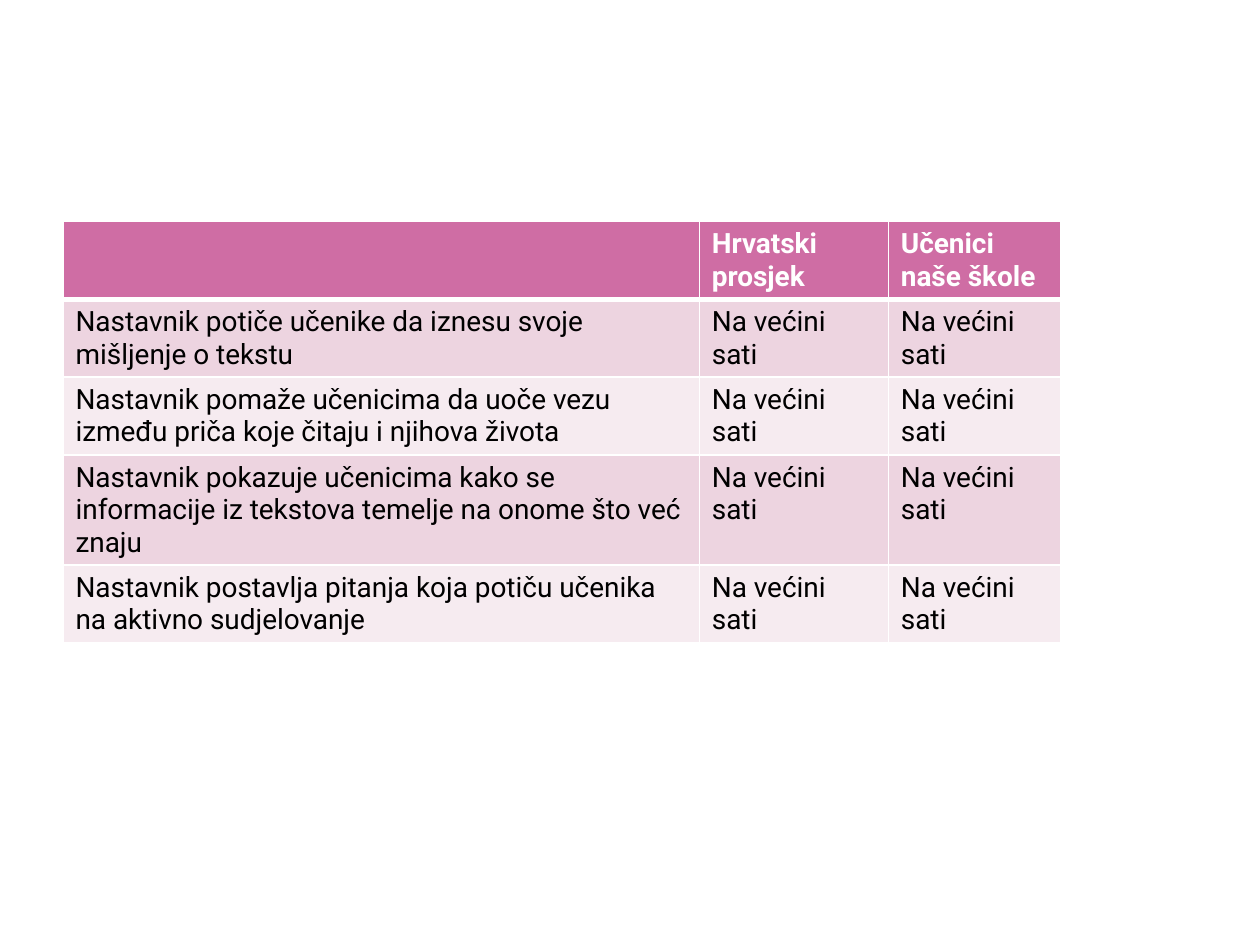
from dataclasses import dataclass

import pptx
import pptx.dml.color
import pptx.oxml.ns
import pptx.util
from lxml import etree


@dataclass(frozen=True)
class Theme:
    font: str = "Roboto"
    size: float = 16
    header: str = "CF6DA4"
    bands: tuple[str, str] = ("EDD4E0", "F6EBF0")
    light: str = "FFFFFF"
    dark: str = "000000"
    rule: float = 1
    header_rule: float = 3


@dataclass(frozen=True)
class Row:
    practice: str
    croatian_average: str
    our_school: str

    def texts(self) -> tuple[str, str, str]:
        return self.practice, self.croatian_average, self.our_school


THEME = Theme()
SLIDE_WIDTH, SLIDE_HEIGHT = 10, 7.5
TABLE_LEFT, TABLE_TOP = 0.05 * SLIDE_WIDTH, 1.76
COLUMN_WIDTHS = (5.05, 1.5, 1.37)
ROW_HEIGHT = 0.41
FREQUENCY = "Na većini sati"
PRACTICES = (
    "Nastavnik potiče učenike da iznesu svoje mišljenje o tekstu",
    "Nastavnik pomaže učenicima da uoče vezu između priča koje čitaju i njihova života",
    "Nastavnik pokazuje učenicima kako se informacije iz tekstova temelje na onome što već znaju",
    "Nastavnik postavlja pitanja koja potiču učenika na aktivno sudjelovanje",
)
ROWS = [Row("", "Hrvatski prosjek", "Učenici naše škole")] + [
    Row(practice, FREQUENCY, FREQUENCY) for practice in PRACTICES
]


def add_borders(cell, top: float, bottom: float) -> None:
    qn = pptx.oxml.ns.qn
    properties = cell._tc.get_or_add_tcPr()
    widths = {"lnL": THEME.rule, "lnR": THEME.rule, "lnT": top, "lnB": bottom}
    for side, width in widths.items():
        line = etree.SubElement(properties, qn(f"a:{side}"), w=str(pptx.util.Pt(width)))
        fill = etree.SubElement(line, qn("a:solidFill"))
        etree.SubElement(fill, qn("a:srgbClr"), val=THEME.light)


def fill_cell(cell, text: str, row_index: int) -> None:
    is_header = row_index == 0
    add_borders(
        cell,
        top=THEME.header_rule if row_index == 1 else THEME.rule,
        bottom=THEME.header_rule if is_header else THEME.rule,
    )
    color = THEME.header if is_header else THEME.bands[(row_index - 1) % 2]
    cell.fill.solid()
    cell.fill.fore_color.rgb = pptx.dml.color.RGBColor.from_string(color)
    if not text:
        return
    span = cell.text_frame.paragraphs[0].add_run()
    span.text = text
    span.font.name = THEME.font
    span.font.size = pptx.util.Pt(THEME.size)
    span.font.bold = is_header
    span.font.color.rgb = pptx.dml.color.RGBColor.from_string(
        THEME.light if is_header else THEME.dark
    )


def add_comparison_table(page, rows: list[Row]) -> None:
    table = page.shapes.add_table(
        len(rows),
        len(COLUMN_WIDTHS),
        pptx.util.Inches(TABLE_LEFT),
        pptx.util.Inches(TABLE_TOP),
        pptx.util.Inches(sum(COLUMN_WIDTHS)),
        pptx.util.Inches(ROW_HEIGHT * len(rows)),
    ).table
    for column, width in zip(table.columns, COLUMN_WIDTHS):
        column.width = pptx.util.Inches(width)
    for row_index, row in enumerate(rows):
        for column_index, text in enumerate(row.texts()):
            fill_cell(table.cell(row_index, column_index), text, row_index)


def main() -> None:
    deck = pptx.Presentation()
    deck.slide_width = pptx.util.Inches(SLIDE_WIDTH)
    deck.slide_height = pptx.util.Inches(SLIDE_HEIGHT)
    page = deck.slides.add_slide(deck.slide_layouts.get_by_name("Blank"))
    add_comparison_table(page, ROWS)
    deck.save("out.pptx")


if __name__ == "__main__":
    main()
